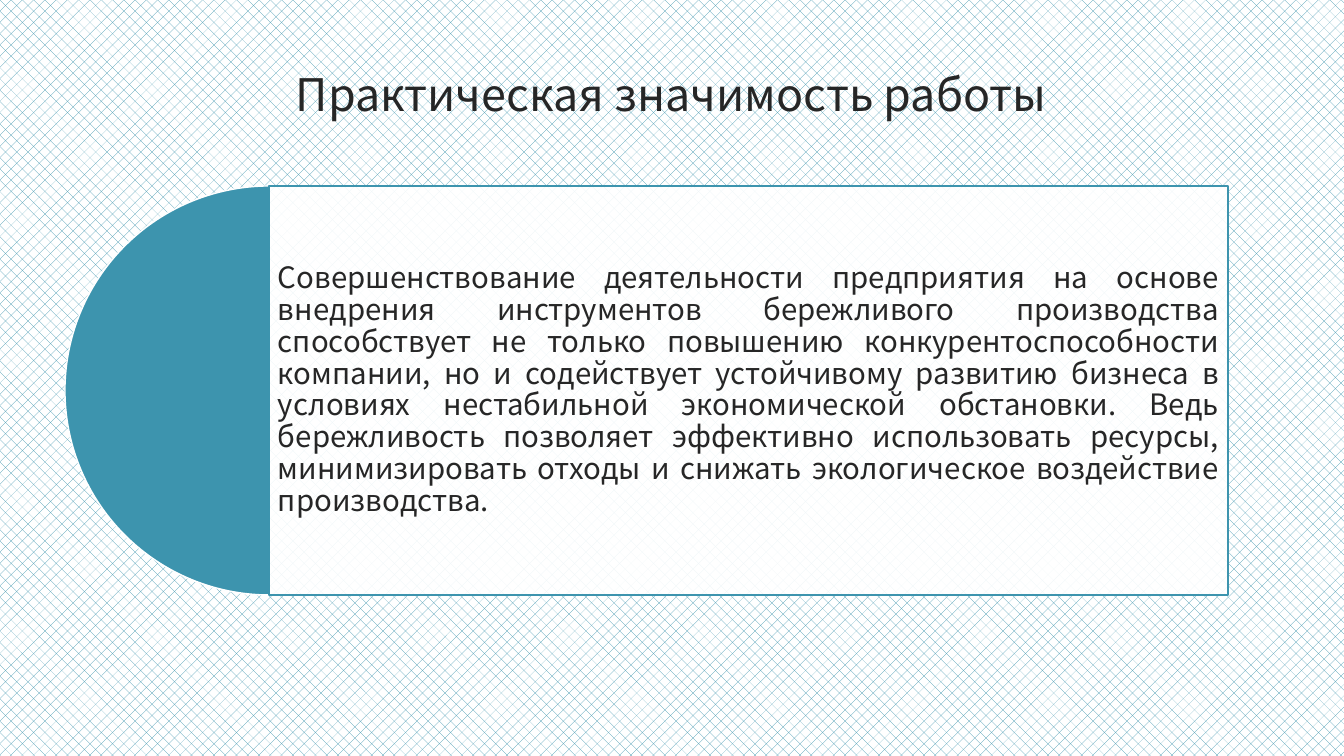
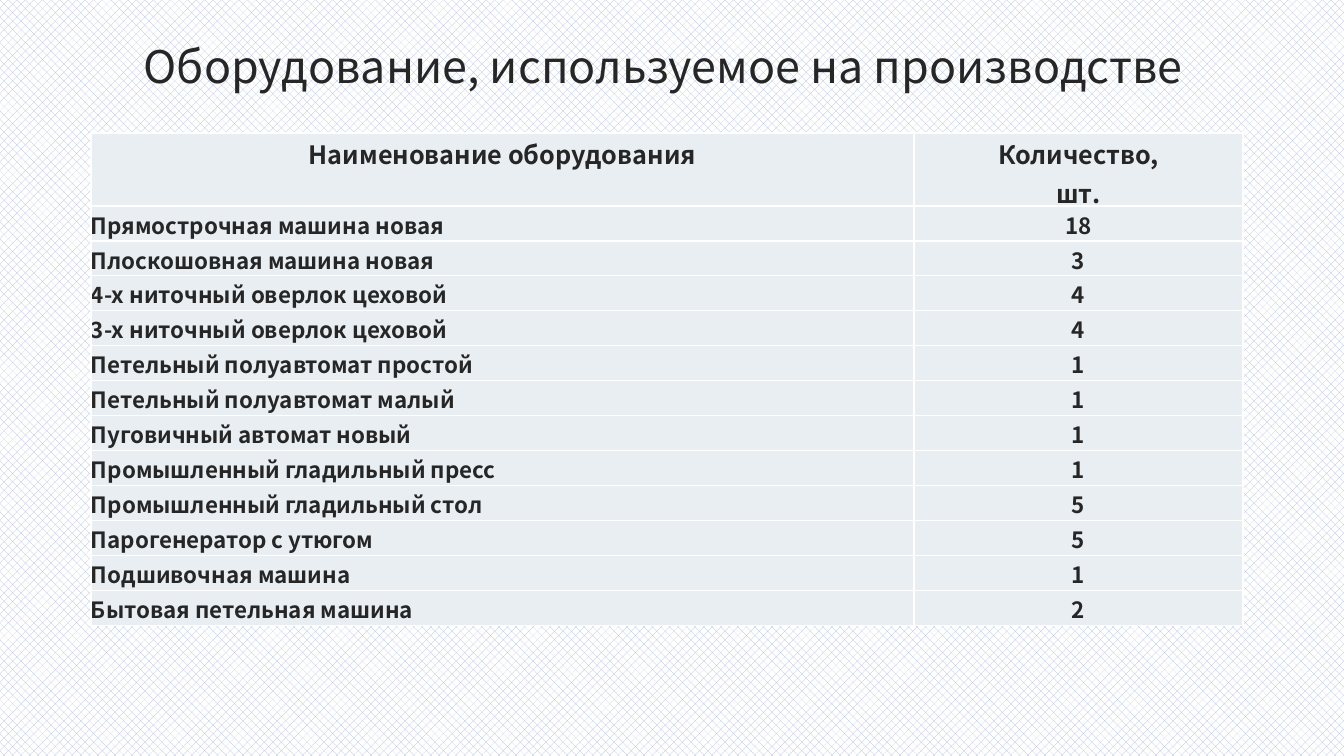
import pptx
import pptx.util
import pptx.dml.color
import pptx.enum.dml
import pptx.enum.shapes
import pptx.enum.text
import pptx.oxml
import pptx.oxml.ns

SCALE = 914400 / 100.8
FONT = "Noto Sans CJK SC"
INK = "262626"
TEAL = "3D94AE"
WHITE = "FFFFFF"
LILAC = "ABB9DF"
PALE = "E8EEF2"
ALIGN = pptx.enum.text.PP_ALIGN
ANCHOR = pptx.enum.text.MSO_ANCHOR
SHAPE = pptx.enum.shapes.MSO_SHAPE
PATTERN = pptx.enum.dml.MSO_PATTERN

BODY = (
    "Совершенствование деятельности предприятия на основе внедрения "
    "инструментов бережливого производства способствует не только повышению "
    "конкурентоспособности компании, но и содействует устойчивому развитию "
    "бизнеса в условиях нестабильной экономической обстановки. Ведь "
    "бережливость позволяет эффективно использовать ресурсы, минимизировать "
    "отходы и снижать экологическое воздействие производства."
)
HEAD = ("Наименование оборудования", "Количество,\nшт.")
ITEMS = [
    ("Прямострочная машина новая", 18),
    ("Плоскошовная машина новая", 3),
    ("4-x ниточный оверлок цеховой", 4),
    ("3-х ниточный оверлок цеховой", 4),
    ("Петельный полуавтомат простой", 1),
    ("Петельный полуавтомат малый", 1),
    ("Пуговичный автомат новый", 1),
    ("Промышленный гладильный пресс", 1),
    ("Промышленный гладильный стол", 5),
    ("Парогенератор с утюгом", 5),
    ("Подшивочная машина", 1),
    ("Бытовая петельная машина", 2),
]


def px(size):
    return pptx.util.Emu(round(size * SCALE))


def paint(color, code):
    color.rgb = pptx.dml.color.RGBColor.from_string(code)


def fill_with(fill, code):
    fill.solid()
    paint(fill.fore_color, code)


def write(frame, text, size, align, space, bold=False):
    frame.text = text
    for para in frame.paragraphs:
        para.alignment = align
        para.line_spacing = space
        para.font.name = FONT
        para.font.size = pptx.util.Pt(size)
        para.font.bold = bold
        paint(para.font.color, INK)


def add_page(deck, pattern, code):
    page = deck.slides.add_slide(deck.slide_layouts[6])
    fill = page.background.fill
    fill.patterned()
    fill.pattern = pattern
    paint(fill.fore_color, code)
    paint(fill.back_color, WHITE)
    return page


def add_title(page, box, text):
    frame = page.shapes.add_textbox(*map(px, box)).text_frame
    frame.word_wrap = True
    frame.vertical_anchor = ANCHOR.BOTTOM
    write(frame, text, 32, ALIGN.CENTER, 0.9)


def add_form(page, kind, box, fill, line):
    form = page.shapes.add_shape(kind, *map(px, box))
    form.shadow.inherit = False
    fill_with(form.fill, fill)
    paint(form.line.color, line)
    form.line.width = pptx.util.Pt(1)
    return form


def add_panel(page, box, text):
    left, top, width, height = box
    pie = add_form(page, SHAPE.PIE, (left, top, height, height), TEAL, WHITE)
    pie.adjustments[0] = 54
    pie.adjustments[1] = 162
    inset = height // 2
    card = add_form(page, SHAPE.RECTANGLE,
                    (left + inset, top, width - inset, height), WHITE, TEAL)
    tint = card.fill._xPr.find(".//" + pptx.oxml.ns.qn("a:srgbClr"))
    tint.append(pptx.oxml.parse_xml(
        f'<a:alpha {pptx.oxml.ns.nsdecls("a")} val="90000"/>'))
    frame = card.text_frame
    frame.word_wrap = True
    frame.vertical_anchor = ANCHOR.MIDDLE
    frame.margin_left = frame.margin_right = px(9)
    frame.margin_top = frame.margin_bottom = px(9)
    write(frame, text, 21, ALIGN.JUSTIFY, 0.9)


def add_edges(cell, code):
    props = cell._tc.get_or_add_tcPr()
    for side in "LRTB":
        props.append(pptx.oxml.parse_xml(
            f'<a:ln{side} {pptx.oxml.ns.nsdecls("a")} w="12700">'
            f'<a:solidFill><a:srgbClr val="{code}"/></a:solidFill>'
            f'</a:ln{side}>'))


def add_grid(page, box, widths, heights, rows):
    frame = page.shapes.add_table(len(rows), len(widths), *map(px, box))
    table = frame.table
    table.first_row = False
    table.horz_banding = False
    for col, width in zip(table.columns, widths):
        col.width = px(width)
    for row, height in zip(table.rows, heights):
        row.height = px(height)
    for r, row in enumerate(rows):
        for c, text in enumerate(row):
            cell = table.cell(r, c)
            cell.margin_left = cell.margin_right = 0
            cell.margin_top = cell.margin_bottom = 0
            add_edges(cell, WHITE)
            fill_with(cell.fill, PALE)
            align = ALIGN.JUSTIFY if r and c == 0 else ALIGN.CENTER
            write(cell.text_frame, str(text), 16 if r else 18, align, 1.07, True)


def add_value(deck):
    page = add_page(deck, PATTERN.PERCENT_25, TEAL)
    add_title(page, (92, 31, 1159, 95), "Практическая значимость работы")
    add_panel(page, (65, 186, 1163, 409), BODY)


def add_tools(deck):
    page = add_page(deck, PATTERN.WEAVE, LILAC)
    add_title(page, (84, 12, 1159, 86),
              "Оборудование, используемое на производстве")
    heights = [73] + [35] * len(ITEMS)
    add_grid(page, (91, 133, 1152, sum(heights)), (823, 329), heights,
             [HEAD] + ITEMS)


def main():
    deck = pptx.Presentation()
    deck.slide_width = px(1344)
    deck.slide_height = px(756)
    add_value(deck)
    add_tools(deck)
    deck.save("out.pptx")


if __name__ == "__main__":
    main()
